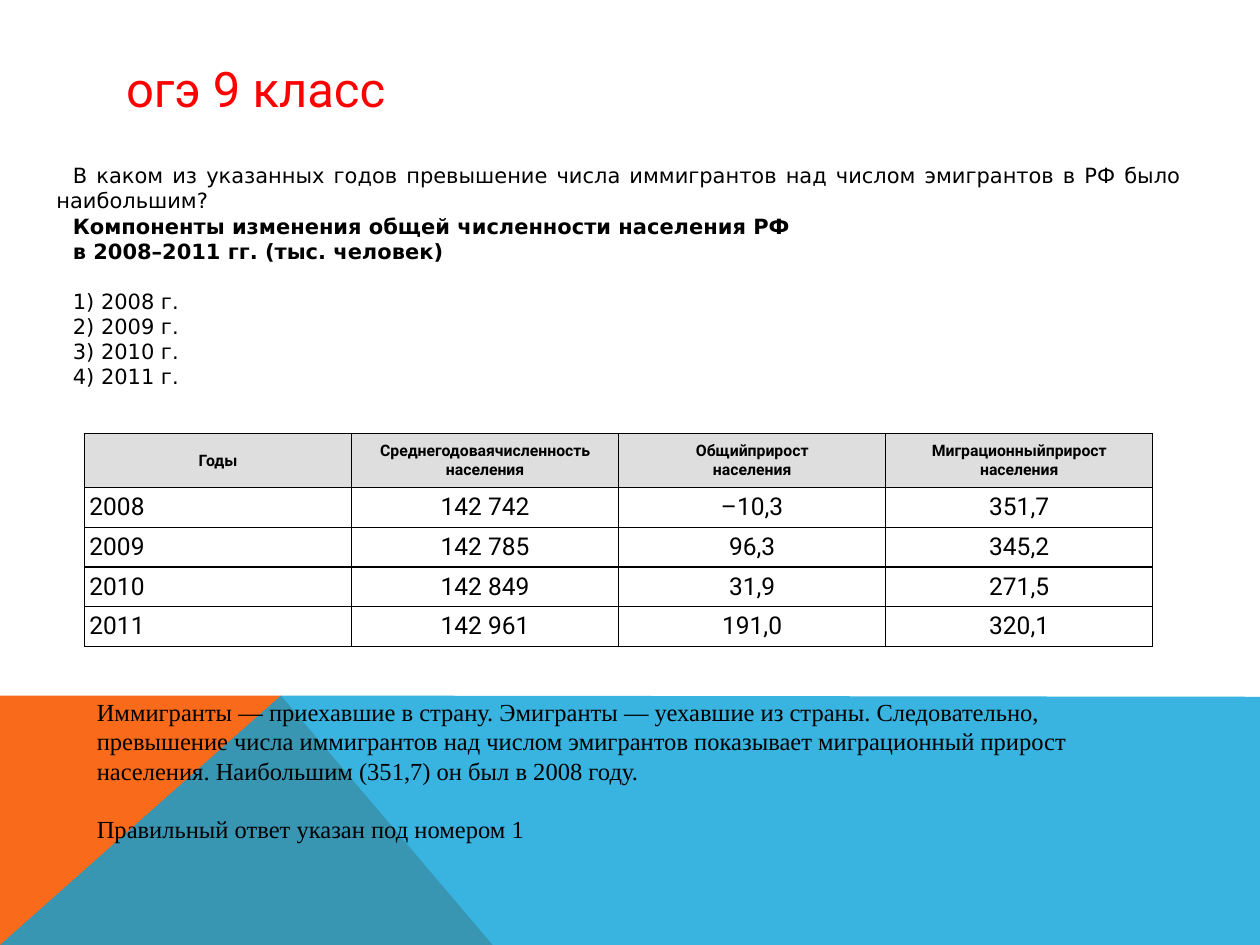
import dataclasses
import typing

import pptx
import pptx.dml.color
import pptx.enum.text
import pptx.oxml
import pptx.oxml.ns
import pptx.util
from lxml import etree

Inches = pptx.util.Inches
Pt = pptx.util.Pt
Align = pptx.enum.text.PP_ALIGN
Anchor = pptx.enum.text.MSO_ANCHOR
AutoSize = pptx.enum.text.MSO_AUTO_SIZE


@dataclasses.dataclass
class Band:
    points: list[tuple[float, float]]
    color: str
    opacity: int = 100


@dataclasses.dataclass
class Style:
    font: str
    size: float
    color: str = "000000"
    bold: bool = False
    align: Align = Align.LEFT


@dataclasses.dataclass
class Line:
    text: str
    bold: bool = False
    gap: float = 0


BANDS = [
    Band([(0, 7.5), (0, 5.52), (2.23, 5.52), (3.91, 7.5)], "F96A1B"),
    Band([(0, 7.5), (2.23, 5.52), (10, 5.53), (10, 7.5)], "08A1D9", 80),
]
TITLE = Style("Roboto", 28, "FF0000")
QUESTION = Style("DejaVu Sans", 12, align=Align.JUSTIFY)
ANSWER = Style("Times New Roman", 14)
HEADER = Style("Roboto", 9, bold=True, align=Align.CENTER)
YEAR = Style("Roboto", 14)
VALUE = Style("Roboto", 14, align=Align.CENTER)

QUESTION_LINES = [
    Line("В каком из указанных годов превышение числа иммигрантов "
         "над числом эмигрантов в РФ было наибольшим?"),
    Line("Компоненты изменения общей численности населения РФ", bold=True),
    Line("в 2008–2011 гг. (тыс. человек)", bold=True),
    Line("1) 2008 г.", gap=14),
    Line("2) 2009 г."),
    Line("3) 2010 г."),
    Line("4) 2011 г."),
]
ANSWER_LINES = [
    Line("Иммигранты — приехавшие в страну. Эмигранты — уехавшие из страны. "
         "Следовательно, превышение числа иммигрантов над числом эмигрантов "
         "показывает миграционный прирост населения. "
         "Наибольшим (351,7) он был в 2008 году."),
    Line("Правильный ответ указан под номером 1", gap=16.8),
]
ROWS = [
    ["Годы", "Среднегодоваячисленность\nнаселения",
     "Общийприрост\nнаселения", "Миграционныйприрост\nнаселения"],
    ["2008", "142 742", "–10,3", "351,7"],
    ["2009", "142 785", "96,3", "345,2"],
    ["2010", "142 849", "31,9", "271,5"],
    ["2011", "142 961", "191,0", "320,1"],
]


def rgb(value: str) -> pptx.dml.color.RGBColor:
    return pptx.dml.color.RGBColor.from_string(value)


def set_all(target: typing.Any, values: dict[str, typing.Any]) -> None:
    for name, value in values.items():
        setattr(target, name, value)


def paint(target: typing.Any, color: str) -> None:
    target.fill.solid()
    target.fill.fore_color.rgb = rgb(color)


def write(frame: typing.Any, lines: list[Line], style: Style) -> None:
    for index, line in enumerate(lines):
        para = frame.paragraphs[0] if index == 0 else frame.add_paragraph()
        set_all(para, {"alignment": style.align, "space_before": Pt(line.gap)})
        span = para.add_run()
        span.text = line.text
        set_all(span.font, {"name": style.font, "size": Pt(style.size),
                            "bold": style.bold or line.bold})
        span.font.color.rgb = rgb(style.color)


def draw_band(page: typing.Any, band: Band) -> None:
    corners = [(Inches(x), Inches(y)) for x, y in band.points]
    builder = page.shapes.build_freeform(*corners[0])
    builder.add_line_segments(corners[1:], close=True)
    shape = builder.convert_to_shape()
    shape.shadow.inherit = False
    paint(shape, band.color)
    shape.line.fill.background()
    if band.opacity < 100:
        color = shape.element.find(".//" + pptx.oxml.ns.qn("a:srgbClr"))
        alpha = etree.SubElement(color, pptx.oxml.ns.qn("a:alpha"))
        alpha.set("val", str(band.opacity * 1000))


def draw_title(page: typing.Any) -> None:
    title = page.shapes.title
    set_all(title, {"left": Inches(0.9), "top": Inches(0.4),
                    "width": Inches(8.22), "height": Inches(0.6)})
    set_all(title.text_frame, {"vertical_anchor": Anchor.MIDDLE,
                               "auto_size": AutoSize.NONE})
    write(title.text_frame, [Line("огэ 9 класс")], TITLE)
    # Keep the title in front of the coloured bands
    title.element.getparent().append(title.element)


def add_borders(cell: typing.Any) -> None:
    properties = cell._tc.get_or_add_tcPr()
    namespace = pptx.oxml.ns.nsdecls("a")
    for side in "LRTB":
        properties.append(pptx.oxml.parse_xml(
            f'<a:ln{side} {namespace} w="9525"><a:solidFill>'
            f'<a:srgbClr val="000000"/></a:solidFill></a:ln{side}>'))


def draw_table(page: typing.Any) -> None:
    header_height, height = 0.43, 1.69
    table = page.shapes.add_table(
        len(ROWS), len(ROWS[0]), Inches(0.67), Inches(3.44),
        Inches(8.48), Inches(height)).table
    set_all(table, {"first_row": False, "horz_banding": False})
    row_height = (height - header_height) / (len(ROWS) - 1)
    margins = ("margin_left", "margin_right", "margin_top", "margin_bottom")
    for row, texts in enumerate(ROWS):
        table.rows[row].height = Inches(row_height if row else header_height)
        for column, text in enumerate(texts):
            cell = table.cell(row, column)
            set_all(cell, dict.fromkeys(margins, Inches(0.04)))
            cell.vertical_anchor = Anchor.MIDDLE
            add_borders(cell)
            paint(cell, "FFFFFF" if row else "DEDEDE")
            style = HEADER if row == 0 else VALUE if column else YEAR
            write(cell.text_frame, [Line(t) for t in text.split("\n")], style)


def draw_question(page: typing.Any) -> None:
    box = page.shapes.add_textbox(
        Inches(0.35), Inches(1.21), Inches(9.13), Inches(1.96))
    paint(box, "FFFFFF")
    set_all(box.text_frame, {
        "word_wrap": True, "vertical_anchor": Anchor.MIDDLE,
        "margin_top": Inches(0.07), "margin_bottom": Inches(0.07)})
    write(box.text_frame, QUESTION_LINES, QUESTION)
    for para in box.text_frame.paragraphs:
        para._p.get_or_add_pPr().set("indent", str(Inches(0.13)))


def draw_answer(page: typing.Any) -> None:
    box = page.shapes.add_textbox(
        Inches(0.67), Inches(5.48), Inches(8.43), Inches(1.28))
    box.text_frame.word_wrap = True
    write(box.text_frame, ANSWER_LINES, ANSWER)


def main() -> None:
    deck = pptx.Presentation()
    set_all(deck, {"slide_width": Inches(10), "slide_height": Inches(7.5)})
    page = deck.slides.add_slide(deck.slide_layouts.get_by_name("Title Only"))
    for band in BANDS:
        draw_band(page, band)
    draw_title(page)
    draw_table(page)
    draw_question(page)
    draw_answer(page)
    deck.save("out.pptx")


if __name__ == "__main__":
    main()
